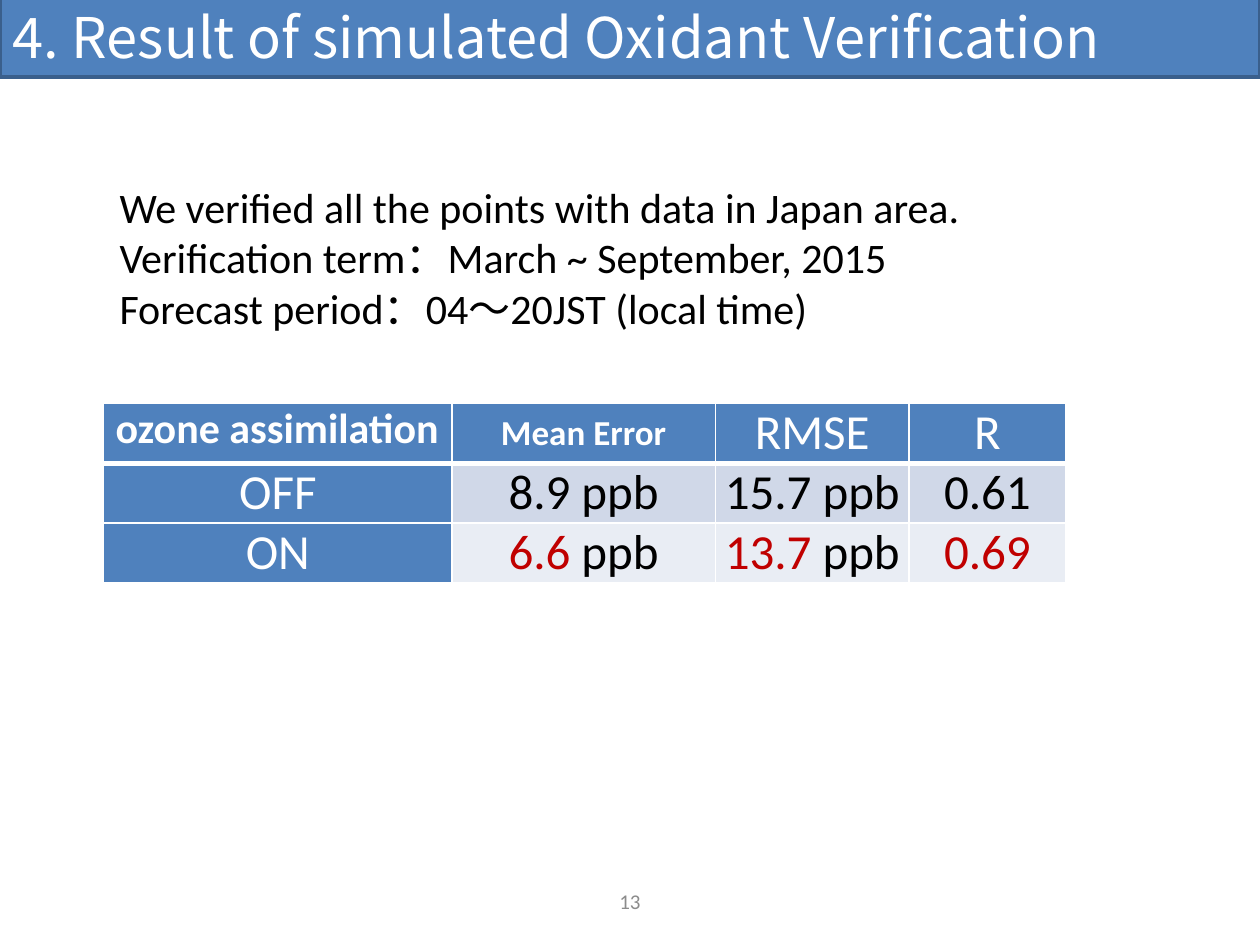
from dataclasses import dataclass

from lxml import etree
from pptx import Presentation
from pptx.dml.color import RGBColor
from pptx.enum.text import MSO_ANCHOR, MSO_AUTO_SIZE, PP_ALIGN
from pptx.oxml.ns import qn
from pptx.util import Cm, Pt

LEFT, CENTER, JUSTIFY = PP_ALIGN.LEFT, PP_ALIGN.CENTER, PP_ALIGN.JUSTIFY
TOP, MIDDLE = MSO_ANCHOR.TOP, MSO_ANCHOR.MIDDLE
NO_AUTOFIT = MSO_AUTO_SIZE.NONE
TITLE_ONLY = 5


@dataclass(frozen=True)
class Theme:
    font: str = "Calibri"
    title_font: str = "Noto Sans CJK JP"
    blue: str = "4F81BD"
    outline: str = "3A5F8C"
    bands: tuple = ("D0D8E8", "E9EDF4")
    white: str = "FFFFFF"
    black: str = "000000"
    red: str = "C00000"
    gray: str = "8C8C8C"
    title: int = 32
    value: int = 28
    body: int = 24
    label: int = 20
    number: int = 12


T = Theme()

INTRO = [
    "We verified all the points with data in Japan area.",
    "Verification term：March ~ September, 2015",
    "Forecast period：04～20JST (local time)",
]
COLUMNS = [7.02, 5.31, 3.91, 3.15]
ROW_HEIGHT = 1.18
HEADERS = [
    ("ozone assimilation", T.body, True),
    ("Mean Error", T.label, True),
    ("RMSE", T.value, False),
    ("R", T.value, False),
]
# Each result is a figure and its unit.
RESULTS = [
    ("OFF", T.black, [("8.9", " ppb"), ("15.7", " ppb"), ("0.61", "")]),
    ("ON", T.red, [("6.6", " ppb"), ("13.7", " ppb"), ("0.69", "")]),
]


def rgb(value):
    return RGBColor.from_string(value)


def add_run(p, text, size, color, font=T.font, bold=False):
    r = p.add_run()
    r.text = text
    values = {"name": font, "size": Pt(size), "bold": bold}
    for name, value in values.items():
        setattr(r.font, name, value)
    r.font.color.rgb = rgb(color)


def place(sp, left, top, width, height):
    sp.left, sp.top, sp.width, sp.height = map(Cm, (left, top, width, height))


def add_title(s, text):
    sp = s.shapes.title
    place(sp, 0, -0.08, 25.4, 1.63)
    sp.fill.solid()
    sp.fill.fore_color.rgb = rgb(T.blue)
    sp.line.color.rgb = rgb(T.outline)
    sp.line.width = Pt(2)
    tf = sp.text_frame
    tf.auto_size = NO_AUTOFIT
    tf.vertical_anchor = MIDDLE
    p = tf.paragraphs[0]
    p.alignment = LEFT
    add_run(p, text, T.title, T.white, T.title_font)


def add_text(s, box, lines, size, color, align=LEFT, anchor=TOP):
    tf = s.shapes.add_textbox(*map(Cm, box)).text_frame
    tf.word_wrap = True
    tf.vertical_anchor = anchor
    for i, line in enumerate(lines):
        p = tf.add_paragraph() if i else tf.paragraphs[0]
        p.alignment = align
        add_run(p, line, size, color)


def set_borders(cell, widths):
    """Draw white borders; widths maps L, R, T and B to points."""
    tcPr = cell._tc.get_or_add_tcPr()
    for side, width in widths.items():
        ln = etree.SubElement(tcPr, qn(f"a:ln{side}"), w=str(Pt(width)))
        fill = etree.SubElement(ln, qn("a:solidFill"))
        etree.SubElement(fill, qn("a:srgbClr"), val=T.white)


def fill_cell(cell, runs, fill, borders, align=CENTER, anchor=MIDDLE, indent=0.05):
    """Format a cell; runs holds (text, size, color, bold)."""
    layout = {
        "margin_left": Cm(indent), "margin_right": Cm(0.05),
        "margin_top": 0, "margin_bottom": 0, "vertical_anchor": anchor,
    }
    for name, value in layout.items():
        setattr(cell, name, value)
    set_borders(cell, borders)
    cell.fill.solid()
    cell.fill.fore_color.rgb = rgb(fill)
    p = cell.text_frame.paragraphs[0]
    p.alignment = align
    for text, size, color, bold in runs:
        add_run(p, text, size, color, bold=bold)


def add_results_table(s):
    rows = len(RESULTS) + 1
    size = map(Cm, (2.09, 8.13, sum(COLUMNS), rows * ROW_HEIGHT))
    table = s.shapes.add_table(rows, len(COLUMNS), *size).table
    for column, width in zip(table.columns, COLUMNS):
        column.width = Cm(width)

    thin = {"L": 1, "R": 1, "T": 1, "B": 1}
    for j, (text, pt, bold) in enumerate(HEADERS):
        first = {"align": JUSTIFY, "anchor": TOP, "indent": 0.24} if j == 0 else {}
        fill_cell(table.cell(0, j), [(text, pt, T.white, bold)], T.blue,
                  thin | {"B": 3}, **first)

    for i, (name, color, results) in enumerate(RESULTS, start=1):
        borders = thin | {"T": 3} if i == 1 else thin
        fill_cell(table.cell(i, 0), [(name, T.value, T.white, False)], T.blue, borders)
        for j, (figure, unit) in enumerate(results, start=1):
            runs = [(figure, T.value, color, False)]
            if unit:
                runs.append((unit, T.value, T.black, False))
            fill_cell(table.cell(i, j), runs, T.bands[i - 1], borders)


def main():
    prs = Presentation()
    prs.slide_width, prs.slide_height = Cm(25.4), Cm(19.05)
    s = prs.slides.add_slide(prs.slide_layouts[TITLE_ONLY])
    add_results_table(s)
    add_title(s, "4. Result of simulated Oxidant Verification")
    add_text(s, (2.16, 3.53, 17.8, 3.33), INTRO, T.body, T.black)
    add_text(s, (8.68, 17.66, 8.04, 1.01), ["13"], T.number, T.gray, CENTER, MIDDLE)
    prs.save("out.pptx")


if __name__ == "__main__":
    main()
